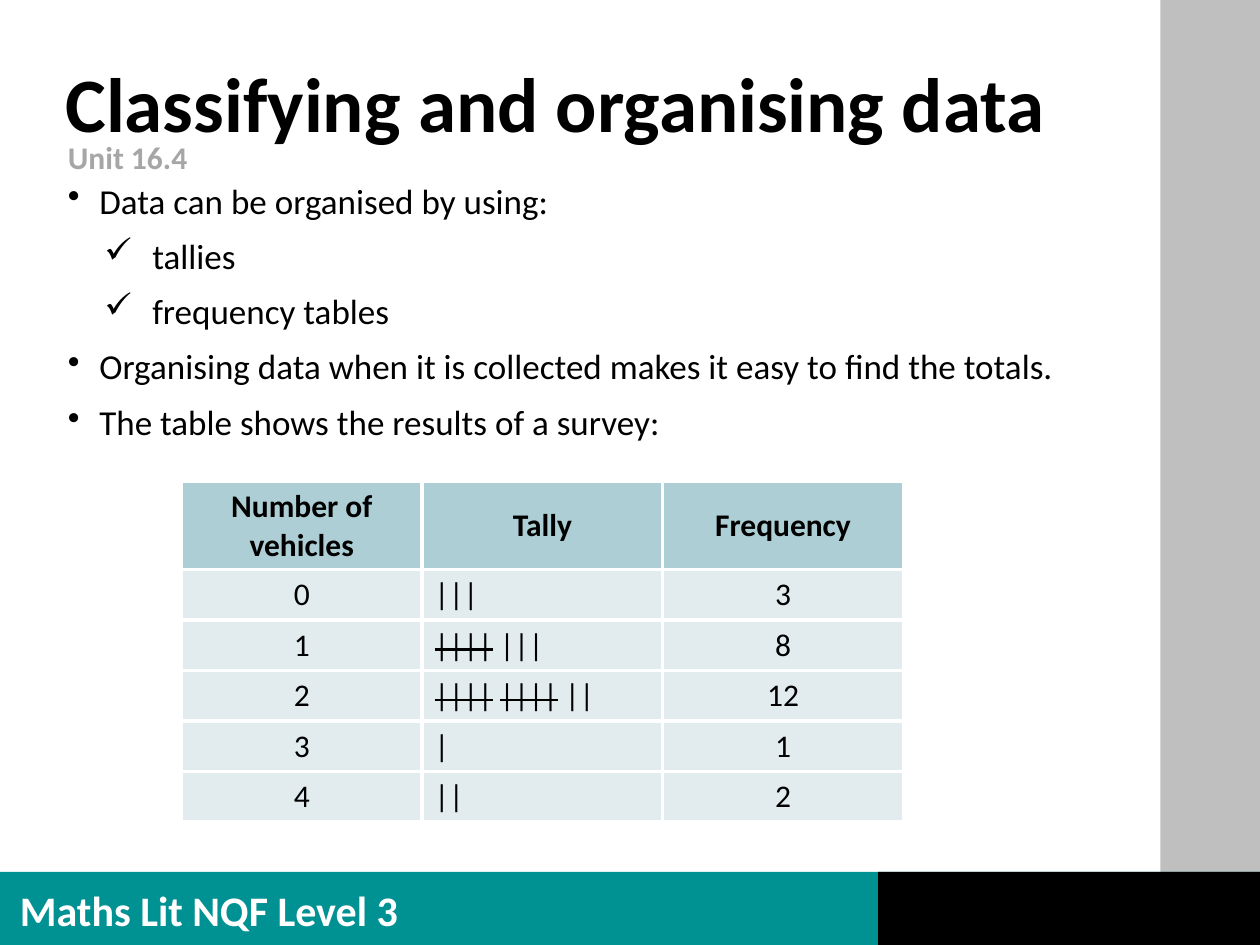
"""Build the slide on classifying and organising data, with a tally table."""
from lxml import etree
from pptx import Presentation
from pptx.dml.color import RGBColor
from pptx.enum import shapes, text
from pptx.oxml import ns
from pptx.util import Inches, Pt

WHITE = RGBColor(0xFF, 0xFF, 0xFF)
BLACK = RGBColor(0, 0, 0)
SIDE_GREY = RGBColor(0xBF, 0xBF, 0xBF)
UNIT_GREY = RGBColor(0xA6, 0xA6, 0xA6)
TEAL = RGBColor(0x00, 0x91, 0x93)
HEADER_BLUE = RGBColor(0xAD, 0xCE, 0xD4)
ROW_BLUE = RGBColor(0xE2, 0xEC, 0xEF)


def style(para, size, color, bold=False):
    para.font.name = "Calibri"
    para.font.size = Pt(size)
    para.font.bold = bold
    para.font.color.rgb = color


def add_text(left, top, width, height, anchor=text.MSO_ANCHOR.TOP):
    box = page.shapes.add_textbox(Inches(left), Inches(top), Inches(width), Inches(height))
    box.text_frame.word_wrap = True
    box.text_frame.vertical_anchor = anchor
    return box.text_frame


deck = Presentation()
deck.slide_width = Inches(10)
deck.slide_height = Inches(7.5)
page = deck.slides.add_slide(deck.slide_layouts[6])

bands = [
    (9.21, 0, 0.79, 7.49, SIDE_GREY),
    (0, 6.92, 10, 0.58, TEAL),
    (6.97, 6.92, 3.03, 0.58, BLACK),
]
for left, top, width, height, color in bands:
    band = page.shapes.add_shape(
        shapes.MSO_SHAPE.RECTANGLE, Inches(left), Inches(top), Inches(width), Inches(height)
    )
    band.shadow.inherit = False
    band.fill.solid()
    band.fill.fore_color.rgb = color
    band.line.fill.background()

headings = [
    ("Maths Lit NQF Level 3", (0.06, 6.97, 3.75, 0.5), 24, WHITE, 1, text.MSO_ANCHOR.TOP),
    ("Classifying and organising data", (0.42, 0.46, 8.65, 0.79), 44, BLACK, 0.9, text.MSO_ANCHOR.MIDDLE),
    ("Unit 16.4", (0.44, 1.08, 8.65, 0.33), 18, UNIT_GREY, 0.9, text.MSO_ANCHOR.TOP),
]
for words, place, size, color, spacing, anchor in headings:
    para = add_text(*place, anchor).paragraphs[0]
    para.text = words
    para.line_spacing = spacing
    style(para, size, color, bold=True)

points = [
    ("•", "Data can be organised by using:"),
    ("✓", "tallies"),
    ("✓", "frequency tables"),
    ("•", "Organising data when it is collected makes it easy to find the totals."),
    ("•", "The table shows the results of a survey:"),
]
indents = {"•": (0.25, -0.25), "✓": (0.67, -0.38)}
body = add_text(0.44, 1.41, 8.65, 2.3)
for index, (mark, words) in enumerate(points):
    para = body.add_paragraph() if index else body.paragraphs[0]
    para.text = words
    para.line_spacing = 0.9
    para.space_before = Pt(10 if index else 0)
    margin, indent = indents[mark]
    properties = para._p.get_or_add_pPr()
    properties.set("marL", str(Inches(margin)))
    properties.set("indent", str(Inches(indent)))
    etree.SubElement(properties, ns.qn("a:buChar")).set("char", mark)
    style(para, 20, BLACK)

STRUCK = "||||"
rows = [
    (["Number of vehicles"], ["Tally"], ["Frequency"]),
    (["0"], ["|||"], ["3"]),
    (["1"], [STRUCK, " |||"], ["8"]),
    (["2"], [STRUCK, " ", STRUCK, " ||"], ["12"]),
    (["3"], ["|"], ["1"]),
    (["4"], ["||"], ["2"]),
]
frame = page.shapes.add_table(
    len(rows), 3, Inches(1.44), Inches(3.82), Inches(5.73), Inches(2.72)
)
table = frame.table
for column in table.columns:
    column.width = Inches(1.91)
for row_index, row in enumerate(rows):
    header = row_index == 0
    table.rows[row_index].height = Inches(0.7 if header else 0.4)
    for column_index, parts in enumerate(row):
        cell = table.cell(row_index, column_index)
        para = cell.text_frame.paragraphs[0]
        for part in parts:
            span = para.add_run()
            span.text = part
            if part == STRUCK:
                span._r.get_or_add_rPr().set("strike", "sngStrike")
        if header or column_index != 1:
            para.alignment = text.PP_ALIGN.CENTER
        style(para, 18, BLACK, bold=header)
        if header:
            cell.vertical_anchor = text.MSO_ANCHOR.MIDDLE
        properties = cell._tc.get_or_add_tcPr()
        for side in ("lnL", "lnR", "lnT", "lnB"):
            border = etree.SubElement(properties, ns.qn(f"a:{side}"), w=str(Pt(2.25)))
            paint = etree.SubElement(border, ns.qn("a:solidFill"))
            etree.SubElement(paint, ns.qn("a:srgbClr"), val=str(WHITE))
        cell.fill.solid()
        cell.fill.fore_color.rgb = HEADER_BLUE if header else ROW_BLUE

deck.save("out.pptx")
